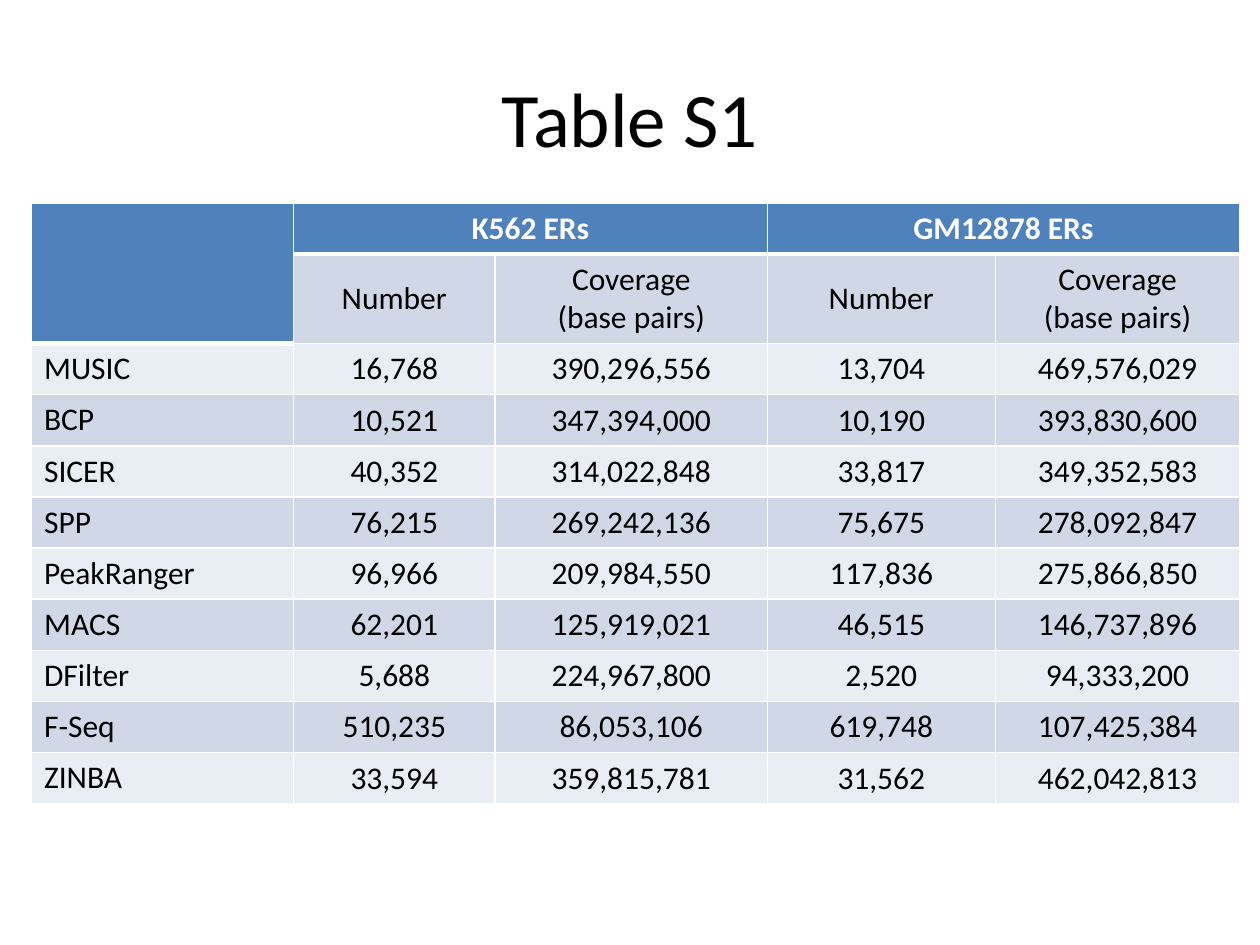
from dataclasses import dataclass

from lxml import etree
from pptx import Presentation
from pptx.dml.color import RGBColor
from pptx.enum.text import MSO_ANCHOR, PP_ALIGN
from pptx.oxml.ns import qn
from pptx.util import Inches, Pt

LEFT, CENTER = PP_ALIGN.LEFT, PP_ALIGN.CENTER
TOP, MIDDLE = MSO_ANCHOR.TOP, MSO_ANCHOR.MIDDLE
FONT = "Calibri"
BLACK = RGBColor(0x00, 0x00, 0x00)
WHITE = RGBColor(0xFF, 0xFF, 0xFF)
BLUE = RGBColor(0x4F, 0x81, 0xBD)
DARK = RGBColor(0xD0, 0xD8, 0xE8)
PALE = RGBColor(0xE9, 0xED, 0xF4)

THIN, THICK = Pt(1), Pt(3)
WIDTHS = (2.08, 1.6, 2.16, 1.81, 1.94)
ROW = Inches(4.06) // 10
TALL = Inches(0.7)

HEADS = [
    ("", "K562 ERs", "", "GM12878 ERs", ""),
    ("",) + ("Number", "Coverage\n(base pairs)") * 2,
]
CALLERS = [
    ("MUSIC", "16,768", "390,296,556", "13,704", "469,576,029"),
    ("BCP", "10,521", "347,394,000", "10,190", "393,830,600"),
    ("SICER", "40,352", "314,022,848", "33,817", "349,352,583"),
    ("SPP", "76,215", "269,242,136", "75,675", "278,092,847"),
    ("PeakRanger", "96,966", "209,984,550", "117,836", "275,866,850"),
    ("MACS", "62,201", "125,919,021", "46,515", "146,737,896"),
    ("DFilter", "5,688", "224,967,800", "2,520", "94,333,200"),
    ("F-Seq", "510,235", "86,053,106", "619,748", "107,425,384"),
    ("ZINBA", "33,594", "359,815,781", "31,562", "462,042,813"),
]


@dataclass
class Look:
    fill: RGBColor
    color: RGBColor
    bold: bool
    align: PP_ALIGN
    anchor: MSO_ANCHOR
    top: int
    bottom: int


def get_look(row: int, col: int) -> Look:
    """Header cells are blue with a thick lower edge; the rest is banded."""
    last = 1 if col == 0 else 0
    head = row <= last
    band = DARK if row % 2 else PALE
    return Look(
        fill=BLUE if head else band,
        color=WHITE if head else BLACK,
        bold=head,
        align=LEFT if col == 0 else CENTER,
        anchor=TOP if head or col == 0 else MIDDLE,
        top=THICK if row == last + 1 else THIN,
        bottom=THICK if row == last or row == col == 0 else THIN,
    )


def add_edges(cell, look: Look) -> None:
    props = cell._tc.get_or_add_tcPr()
    edges = {"L": THIN, "R": THIN, "T": look.top, "B": look.bottom}
    for side, width in edges.items():
        line = etree.SubElement(props, qn(f"a:ln{side}"), w=str(width))
        solid = etree.SubElement(line, qn("a:solidFill"))
        etree.SubElement(solid, qn("a:srgbClr"), val=str(WHITE))


def add_run(para, text: str, size: int, color: RGBColor, bold: bool) -> None:
    run = para.add_run()
    run.text = text
    run.font.name = FONT
    run.font.size = Pt(size)
    run.font.color.rgb = color
    run.font.bold = bold


def fill_cell(cell, text: str, look: Look) -> None:
    add_edges(cell, look)
    cell.fill.solid()
    cell.fill.fore_color.rgb = look.fill
    cell.vertical_anchor = look.anchor
    frame = cell.text_frame
    for i, part in enumerate(text.split("\n") if text else []):
        para = frame.add_paragraph() if i else frame.paragraphs[0]
        para.alignment = look.align
        add_run(para, part, 18, look.color, look.bold)


def add_grid(slide) -> None:
    rows = HEADS + CALLERS
    heights = [TALL if r == 1 else ROW for r in range(len(rows))]
    frame = slide.shapes.add_table(
        len(rows), len(WIDTHS), Inches(0.25), Inches(1.61),
        Inches(sum(WIDTHS)), sum(heights))
    table = frame.table
    for col, width in zip(table.columns, WIDTHS):
        col.width = Inches(width)
    for r, texts in enumerate(rows):
        table.rows[r].height = heights[r]
        for c, text in enumerate(texts):
            fill_cell(table.cell(r, c), text, get_look(r, c))
    table.cell(0, 0).merge(table.cell(1, 0))
    for c in (1, 3):
        table.cell(0, c).merge(table.cell(0, c + 1))


def add_title(slide, text: str) -> None:
    title = slide.shapes.title
    title.left, title.top = Inches(0.5), Inches(0.3)
    title.width, title.height = Inches(9), Inches(1.25)
    title.text_frame.vertical_anchor = MIDDLE
    para = title.text_frame.paragraphs[0]
    para.alignment = CENTER
    add_run(para, text, 44, BLACK, False)


def main() -> None:
    deck = Presentation()
    deck.slide_width, deck.slide_height = Inches(10), Inches(7.5)
    slide = deck.slides.add_slide(deck.slide_layouts[5])
    add_title(slide, "Table S1")
    add_grid(slide)
    deck.save("out.pptx")


if __name__ == "__main__":
    main()
